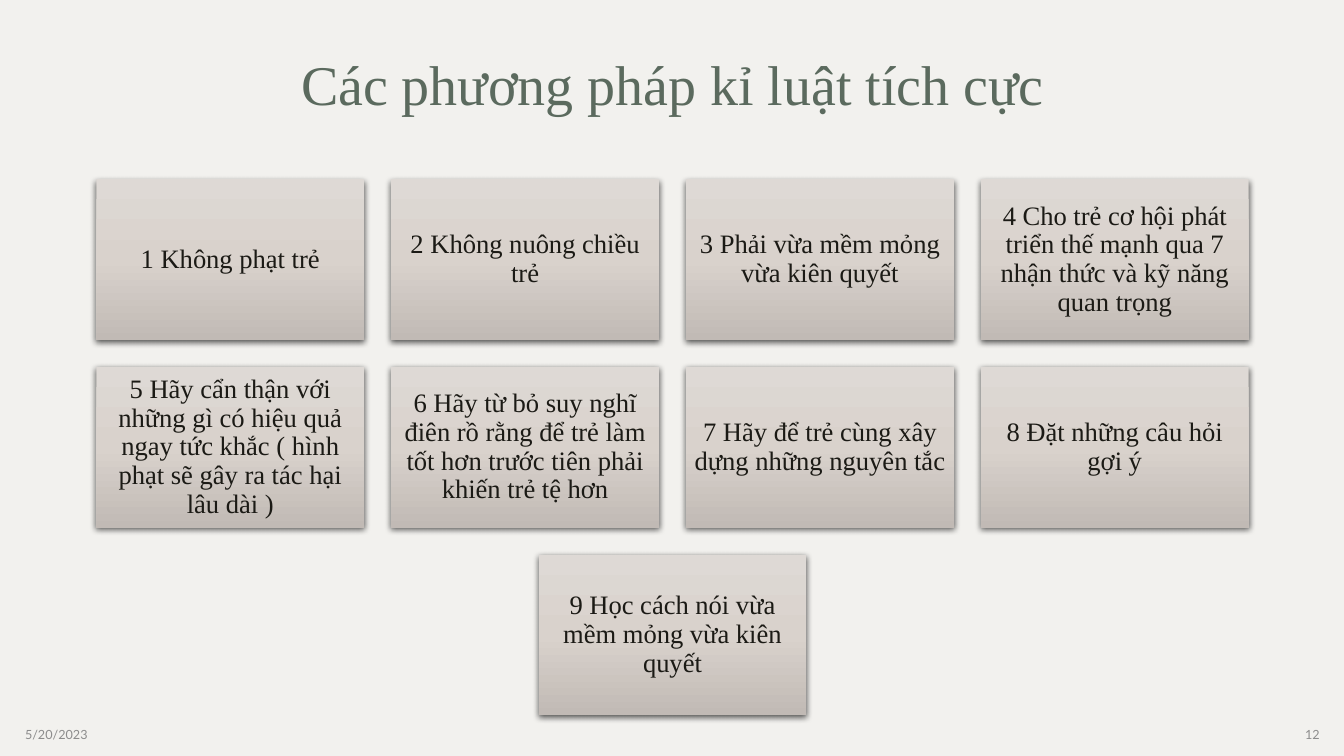
from pptx import Presentation
from pptx.dml.color import RGBColor
from pptx.enum.shapes import MSO_SHAPE
from pptx.enum.text import MSO_ANCHOR, PP_ALIGN
from pptx.oxml import parse_xml
from pptx.oxml.ns import nsdecls
from pptx.util import Pt

PAPER = RGBColor(0xF2, 0xF1, 0xEE)
GREEN = RGBColor(0x5B, 0x6A, 0x5E)
INK = RGBColor(0x1B, 0x1A, 0x15)
GREY = RGBColor(0x8C, 0x8C, 0x8C)
LIGHT = RGBColor(0xDE, 0xD9, 0xD5)
MID = RGBColor(0xD9, 0xD2, 0xCC)
DARK = RGBColor(0xC1, 0xBA, 0xB5)
SERIF = "Times New Roman"

ROWS = [
    [
        "1 Không phạt trẻ",
        "2 Không nuông chiều trẻ",
        "3 Phải vừa mềm mỏng vừa kiên quyết",
        "4 Cho trẻ cơ hội phát triển thế mạnh qua 7 nhận thức và kỹ năng quan trọng",
    ],
    [
        "5 Hãy cẩn thận với những gì có hiệu quả ngay tức khắc ( hình phạt sẽ gây ra tác hại lâu dài )",
        "6 Hãy từ bỏ suy nghĩ điên rồ rằng để trẻ làm tốt hơn trước tiên phải khiến trẻ tệ hơn",
        "7 Hãy để trẻ cùng xây dựng những nguyên tắc",
        "8 Đặt những câu hỏi gợi ý",
    ],
    ["9 Học cách nói vừa mềm mỏng vừa kiên quyết"],
]
CENTER, TOP = 480.4, 128.1
WIDE, HIGH, GAP = 191.4, 114.8, 19.2


def write(shape, text, font, size, color, align):
    frame = shape.text_frame
    frame.word_wrap = True
    frame.vertical_anchor = MSO_ANCHOR.MIDDLE
    frame.text = text
    para = frame.paragraphs[0]
    para.alignment = align
    face = para.runs[0].font
    face.name, face.size, face.color.rgb = font, Pt(size), color
    return para


def shade(shape):
    stops = "".join(
        f'<a:gs pos="{pos}"><a:srgbClr val="{color}"/></a:gs>'
        for pos, color in [(0, LIGHT), (50000, MID), (100000, DARK)]
    )
    props = shape._element.spPr
    props.append(parse_xml(
        f'<a:gradFill {nsdecls("a")} rotWithShape="1"><a:gsLst>{stops}</a:gsLst>'
        '<a:lin ang="5400000" scaled="0"/></a:gradFill>'
    ))
    shape.line.fill.background()
    props.append(parse_xml(
        f'<a:effectLst {nsdecls("a")}><a:outerShdw blurRad="{Pt(4.5)}" dist="{Pt(1.5)}" '
        'dir="5400000" algn="ctr" rotWithShape="0"><a:srgbClr val="000000">'
        '<a:alpha val="63000"/></a:srgbClr></a:outerShdw></a:effectLst>'
    ))


deck = Presentation()
deck.slide_width, deck.slide_height = Pt(960), Pt(540)
slide = deck.slides.add_slide(deck.slide_layouts[5])
slide.background.fill.solid()
slide.background.fill.fore_color.rgb = PAPER

title = slide.shapes.title
title.left, title.top, title.width, title.height = Pt(67), Pt(9.4), Pt(826.6), Pt(106.6)
para = write(title, "Các phương pháp kỉ luật tích cực", SERIF, 40, GREEN, PP_ALIGN.CENTER)
para.line_spacing = 0.9

for left, text, align in [(10.8, "5/20/2023", PP_ALIGN.LEFT), (733.7, "12", PP_ALIGN.RIGHT)]:
    foot = slide.shapes.add_textbox(Pt(left), Pt(510.5), Pt(216), Pt(28.8))
    write(foot, text, "Lato", 9, GREY, align).space_after = Pt(6)

for row, texts in enumerate(ROWS):
    start = CENTER - (len(texts) * (WIDE + GAP) - GAP) / 2
    for col, text in enumerate(texts):
        card = slide.shapes.add_shape(
            MSO_SHAPE.RECTANGLE,
            Pt(start + col * (WIDE + GAP)), Pt(TOP + row * (HIGH + GAP)), Pt(WIDE), Pt(HIGH),
        )
        shade(card)
        para = write(card, text, SERIF, 19, INK, PP_ALIGN.CENTER)
        para.line_spacing = 0.9
        frame = card.text_frame
        frame.margin_left = frame.margin_right = Pt(5.7)
        frame.margin_top = frame.margin_bottom = Pt(5.7)

deck.save("out.pptx")
